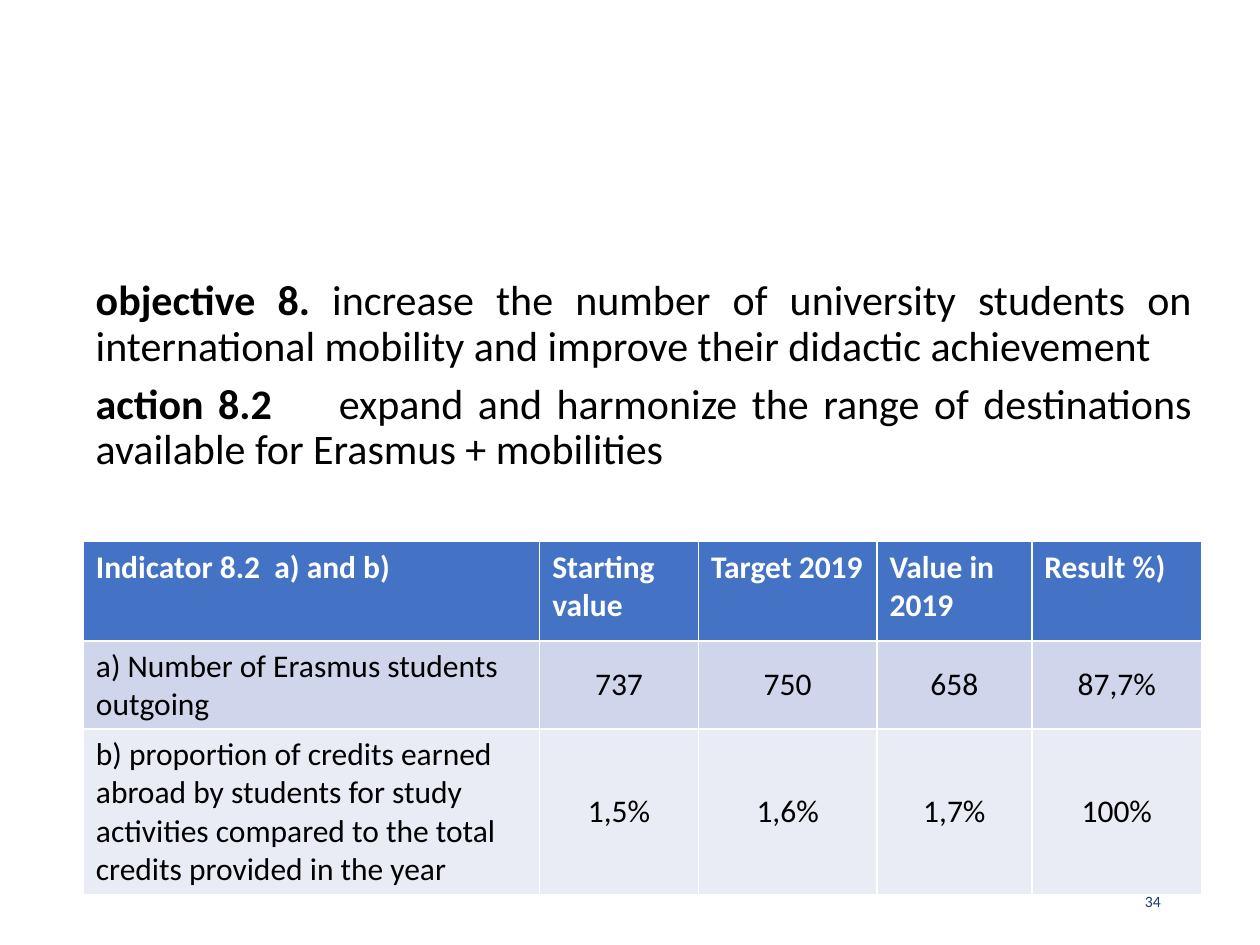
import pptx
import pptx.util
import pptx.dml.color
import pptx.enum.text
import pptx.oxml
import pptx.oxml.ns

Cm = pptx.util.Cm
Pt = pptx.util.Pt
Align = pptx.enum.text.PP_ALIGN
Mid = pptx.enum.text.MSO_ANCHOR.MIDDLE
hues = {"ink": "000000", "page": "203864", "pale": "FFFFFF",
        "head": "4472C4", "odd": "CFD5EA", "even": "E9EBF5"}


def tint(name):
    return pptx.dml.color.RGBColor.from_string(hues[name])


def write(para, text, size, hue, bold=False):
    run = para.add_run()
    run.text = text
    form = {"name": "Calibri", "size": Pt(size), "bold": bold}
    for key, val in form.items():
        setattr(run.font, key, val)
    run.font.color.rgb = tint(hue)


deck = pptx.Presentation()
deck.slide_width, deck.slide_height = Cm(25.4), Cm(19.05)
slide = deck.slides.add_slide(deck.slide_layouts[6])

page = slide.shapes.add_textbox(Cm(17.93), Cm(17.65), Cm(5.72), Cm(1.02)).text_frame
page.word_wrap = True
page.vertical_anchor = Mid
page.paragraphs[0].alignment = Align.RIGHT
write(page.paragraphs[0], "34", 9, "page")

goals = [
    ("objective 8.", " increase the number of university students on "
     "international mobility and improve their didactic achievement"),
    ("action 8.2", "\texpand and harmonize the range of destinations "
     "available for Erasmus + mobilities"),
]
body = slide.shapes.add_textbox(Cm(1.68), Cm(5.51), Cm(22.6), Cm(4.6)).text_frame
body.word_wrap = True
for num, (label, text) in enumerate(goals):
    para = body.add_paragraph() if num else body.paragraphs[0]
    form = {"alignment": Align.JUSTIFY, "line_spacing": 0.9,
            "space_before": Pt(7.5 if num else 0)}
    for key, val in form.items():
        setattr(para, key, val)
    if "\t" in text:
        stops = pptx.oxml.parse_xml(
            f'<a:tabLst {pptx.oxml.ns.nsdecls("a")}>'
            f'<a:tab pos="{Cm(4.8)}" algn="l"/></a:tabLst>')
        para._p.get_or_add_pPr().append(stops)
    write(para, label, 24, "ink", True)
    write(para, text, 24, "ink")

rows = [
    ["Indicator 8.2  a) and b)", "Starting value", "Target 2019",
     "Value in 2019", "Result %)"],
    ["a) Number of Erasmus students outgoing", "737", "750", "658", "87,7%"],
    ["b) proportion of credits earned abroad by students for study activities "
     "compared to the total credits provided in the year",
     "1,5%", "1,6%", "1,7%", "100%"],
]
wide = [9.2, 3.2, 3.6, 3.12, 3.43]
high = [2, 1.75, 3.33]
grid = slide.shapes.add_table(len(rows), len(wide), Cm(1.68), Cm(10.92),
                              Cm(sum(wide)), Cm(sum(high))).table
for col, size in zip(grid.columns, wide):
    col.width = Cm(size)
for top, (row, size, fill) in enumerate(zip(rows, high, ["head", "odd", "even"])):
    grid.rows[top].height = Cm(size)
    for left, text in enumerate(row):
        cell = grid.cell(top, left)
        cell.fill.solid()
        cell.fill.fore_color.rgb = tint(fill)
        para = cell.text_frame.paragraphs[0]
        if top:
            cell.vertical_anchor = Mid
            para.alignment = Align.CENTER if left else Align.LEFT
        write(para, text, 18, "ink" if top else "pale", not top)

deck.save("out.pptx")
